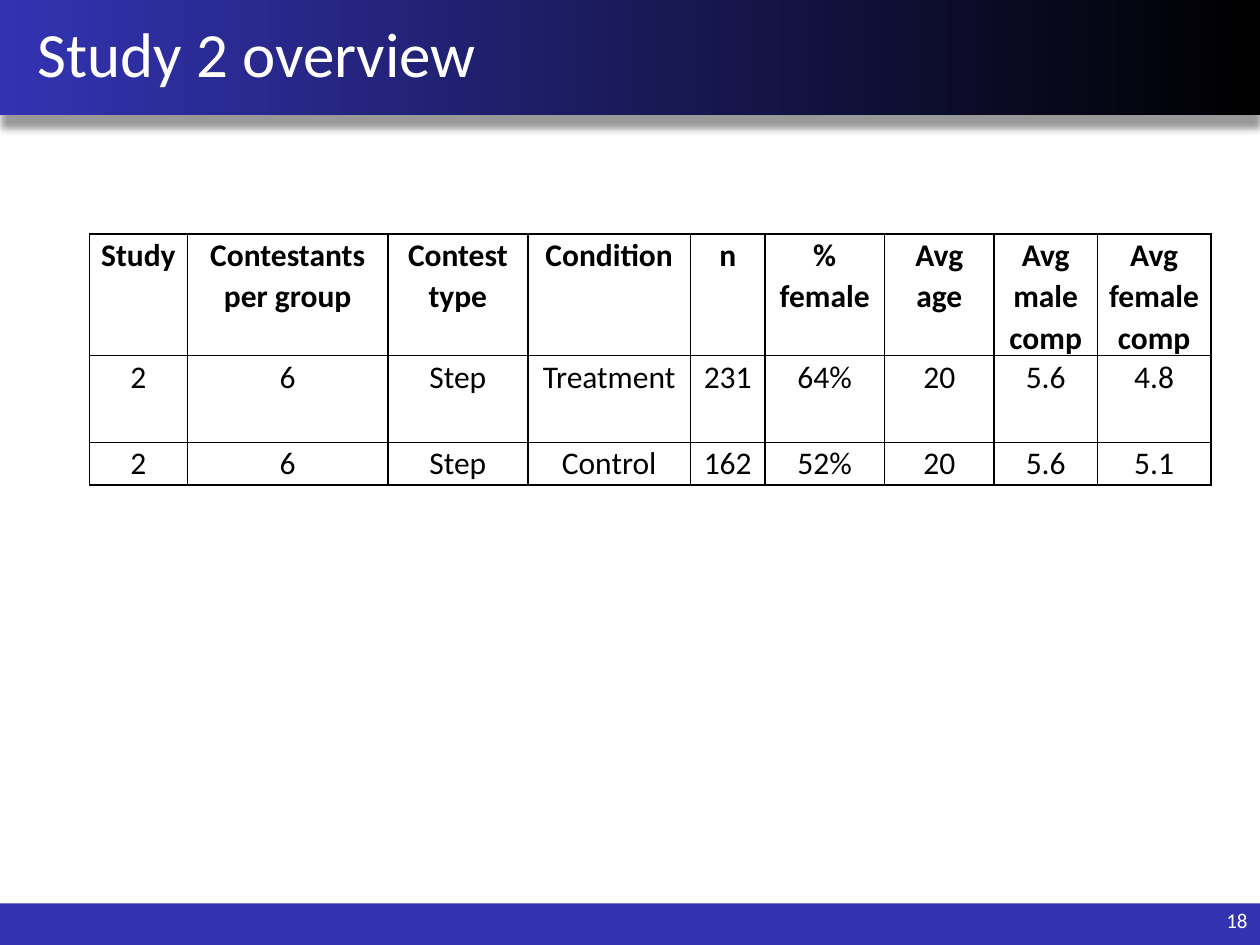
import pptx
import pptx.dml.color
import pptx.enum.shapes
import pptx.enum.text
import pptx.oxml
import pptx.oxml.ns
import pptx.util
from lxml import etree

Cm = pptx.util.Cm
Pt = pptx.util.Pt
Align = pptx.enum.text.PP_ALIGN
Anchor = pptx.enum.text.MSO_ANCHOR
qn = pptx.oxml.ns.qn

BLACK = pptx.dml.color.RGBColor(0x00, 0x00, 0x00)
WHITE = pptx.dml.color.RGBColor(0xFF, 0xFF, 0xFF)
BLUE = pptx.dml.color.RGBColor(0x33, 0x33, 0xB2)
FONT = "Calibri"
SLIDE_WIDTH, SLIDE_HEIGHT = Cm(25.4), Cm(19.05)

COLUMN_WIDTHS = [1.98, 4.04, 2.82, 3.28, 1.5, 2.41, 2.21, 2.08, 2.29]
ROW_HEIGHTS = [2.21, 1.75, 0.86]
STUDY_ROWS = [
    ["Study", "Contestants per group", "Contest type", "Condition", "n",
     "% female", "Avg age", "Avg male comp", "Avg female comp"],
    ["2", "6", "Step", "Treatment", "231", "64%", "20", "5.6", "4.8"],
    ["2", "6", "Step", "Control", "162", "52%", "20", "5.6", "5.1"],
]


def write(para, text, size, color, align, bold=False):
    para.alignment = align
    span = para.add_run()
    span.text = text
    span.font.name = FONT
    span.font.size = Pt(size)
    span.font.bold = bold
    span.font.color.rgb = color


def add_bar(page, top, height):
    bar = page.shapes.add_shape(pptx.enum.shapes.MSO_SHAPE.RECTANGLE,
                                0, top, SLIDE_WIDTH, height)
    bar.shadow.inherit = False
    bar.line.fill.background()
    bar.fill.solid()
    bar.fill.fore_color.rgb = BLUE
    return bar


def add_header_bar(page):
    """Add the top bar, which fades from blue to black and casts a shadow."""
    bar = add_bar(page, 0, Cm(2.33))
    bar.fill.gradient()
    bar.fill.gradient_angle = 180
    for stop, color in zip(bar.fill.gradient_stops, (BLACK, BLUE)):
        stop.color.rgb = color
    effects = bar.element.spPr.find(qn("a:effectLst"))
    shadow = etree.SubElement(effects, qn("a:outerShdw"), blurRad=str(Pt(4)),
                              dist=str(Pt(7)), dir="5400000", rotWithShape="0")
    color = etree.SubElement(shadow, qn("a:srgbClr"), val=str(BLACK))
    etree.SubElement(color, qn("a:alpha"), val="40000")


def place_title(page, text):
    """Fill the title placeholder and bring it in front of the header bar."""
    title = page.shapes.title
    title.element.getparent().append(title.element)
    title.left, title.top, title.width, title.height = 0, 0, Cm(24.77), Cm(2.11)
    title.text_frame.vertical_anchor = Anchor.MIDDLE
    para = title.text_frame.paragraphs[0]
    write(para, text, 36, WHITE, Align.LEFT)
    properties = para._p.get_or_add_pPr()
    properties.set("marL", str(Cm(0.5)))
    properties.set("indent", "0")


def add_page_number(page, number):
    box = page.shapes.add_textbox(Cm(22.43), Cm(18.03), Cm(2.97), Cm(1.02))
    box.text_frame.word_wrap = True
    box.text_frame.vertical_anchor = Anchor.MIDDLE
    write(box.text_frame.paragraphs[0], number, 12, WHITE, Align.RIGHT)


def draw_borders(cell):
    properties = cell._tc.get_or_add_tcPr()
    for index, side in enumerate(("a:lnL", "a:lnR", "a:lnT", "a:lnB")):
        line = pptx.oxml.parse_xml(
            f'<{side} {pptx.oxml.ns.nsdecls("a")} w="{Pt(1)}"><a:solidFill>'
            f'<a:srgbClr val="{BLACK}"/></a:solidFill></{side}>')
        properties.insert(index, line)


def fill_cell(cell, text, bold):
    cell.fill.background()
    cell.margin_left = cell.margin_right = Cm(0.18)
    cell.margin_top = cell.margin_bottom = 0
    para = cell.text_frame.paragraphs[0]
    para.line_spacing = 1.07
    write(para, text, 18, BLACK, Align.CENTER, bold)
    draw_borders(cell)


def add_study_table(page):
    frame = page.shapes.add_table(
        len(STUDY_ROWS), len(COLUMN_WIDTHS), Cm(1.8), Cm(4.72),
        Cm(sum(COLUMN_WIDTHS)), Cm(sum(ROW_HEIGHTS)))
    table = frame.table
    table.horz_banding = False
    table.first_row = False
    for column, width in zip(table.columns, COLUMN_WIDTHS):
        column.width = Cm(width)
    for row, height in zip(table.rows, ROW_HEIGHTS):
        row.height = Cm(height)
    for row_index, texts in enumerate(STUDY_ROWS):
        for column_index, text in enumerate(texts):
            fill_cell(table.cell(row_index, column_index), text,
                      bold=row_index == 0)


def main():
    deck = pptx.Presentation()
    deck.slide_width, deck.slide_height = SLIDE_WIDTH, SLIDE_HEIGHT
    page = deck.slides.add_slide(deck.slide_layouts.get_by_name("Title Only"))
    add_bar(page, Cm(18.21), Cm(0.84))
    add_header_bar(page)
    place_title(page, "Study 2 overview")
    add_page_number(page, "18")
    add_study_table(page)
    deck.save("out.pptx")


if __name__ == "__main__":
    main()
